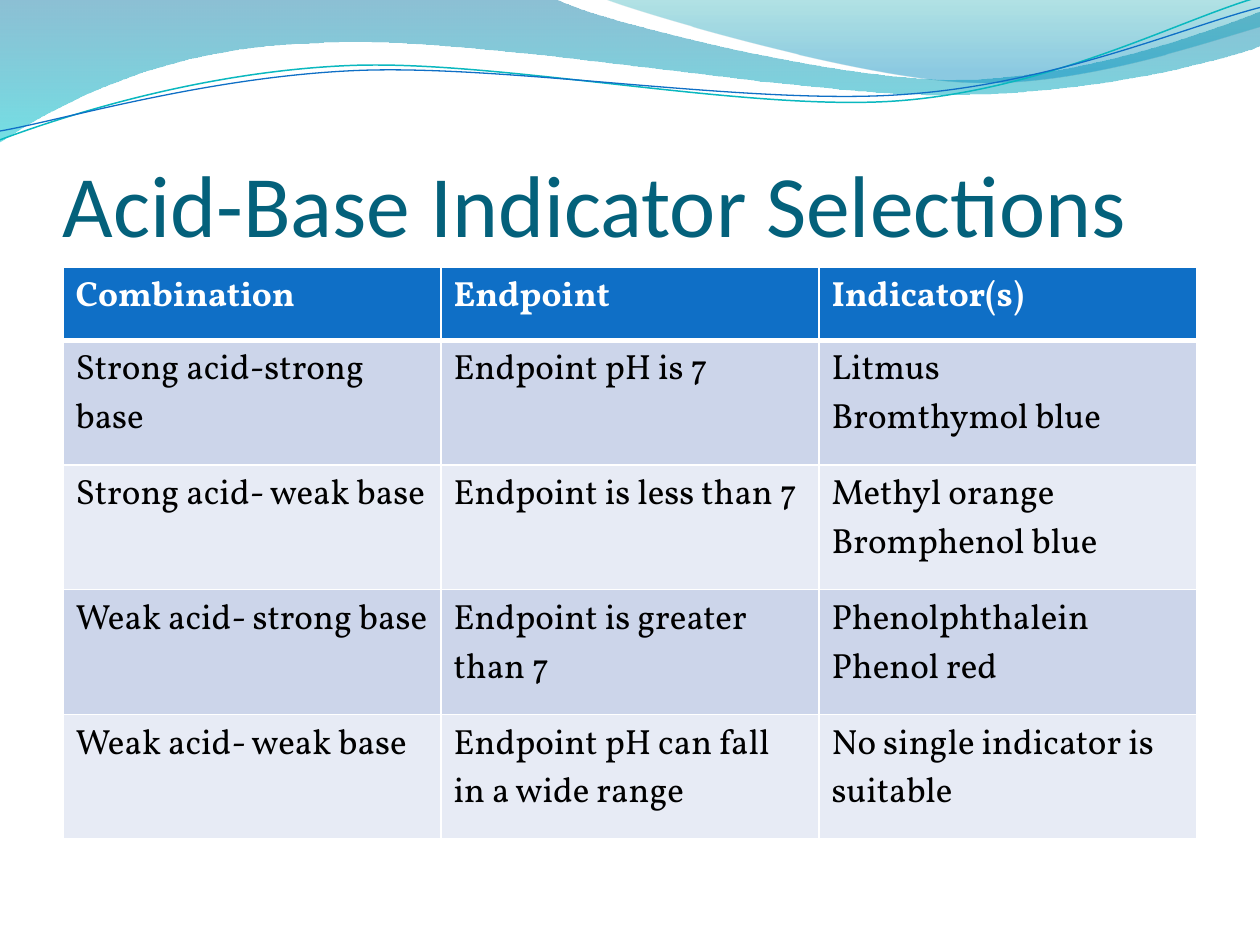
import math
from dataclasses import dataclass

import lxml.etree
import pptx
import pptx.dml.color
import pptx.enum.text
import pptx.oxml.ns
import pptx.util

Inches = pptx.util.Inches
Point = tuple[float, float]
Outline = list[list[Point]]
qn = pptx.oxml.ns.qn
TILT = 2.7


@dataclass
class Stop:
    position: float
    color: str
    opacity: int


@dataclass
class Band:
    outline: Outline
    stops: list[Stop]


@dataclass
class Ripple:
    outline: Outline
    center: Point
    color: str
    width: float


BANDS = [
    Band(
        [[(0, 0)], [(4.4, -0.01)],
         [(4.76, 0.17), (6.64, 0.63), (7.58, 0.63)],
         [(8.53, 0.63), (9.58, 0.26), (10, 0.09)],
         [(10.01, 0.36)],
         [(9.83, 0.44), (8.7, 0.76), (7.46, 0.75)],
         [(6.22, 0.75), (3.82, 0.28), (2.57, 0.34)],
         [(1.29, 0.36), (0.46, 0.83), (-0.01, 1.13)],
         [(0, 0)]],
        [Stop(0, "0074A1", 45), Stop(1, "00C6CF", 55)],
    ),
    Band(
        [[(4.79, -0.01)],
         [(5.09, 0.11), (6.82, 0.62), (7.69, 0.65)],
         [(8.56, 0.69), (9.61, 0.32), (10, 0.21)],
         [(10, 0)], [(4.79, -0.01)]],
        [Stop(0, "00A1A9", 30), Stop(0.8, "008BBF", 45)],
    ),
]
RIPPLES = [
    Ripple(
        [[(0, 1.11)],
         [(0.48, 0.93), (1.58, 0.57), (2.77, 0.52)],
         [(3.95, 0.47), (5.93, 0.89), (7.13, 0.8)],
         [(8.33, 0.71), (9.38, 0.15), (9.98, -0.02)]],
        (4.99, 0.58), "0AB8BF", 0.85,
    ),
    Ripple(
        [[(0, 1.04)],
         [(0.47, 0.96), (1.64, 0.61), (2.83, 0.56)],
         [(4.03, 0.51), (5.97, 0.84), (7.17, 0.75)],
         [(8.36, 0.67), (9.41, 0.21), (10, 0.06)]],
        (5, 0.59), "0F6FC6", 0.75,
    ),
]
ROWS = [
    ("Combination", "Endpoint", "Indicator(s)"),
    ("Strong acid-strong base", "Endpoint pH is 7", "Litmus\nBromthymol blue"),
    ("Strong acid- weak base", "Endpoint is less than 7", "Methyl orange\nBromphenol blue"),
    ("Weak acid- strong base", "Endpoint is greater than 7", "Phenolphthalein\nPhenol red"),
    ("Weak acid- weak base", "Endpoint pH can fall in a wide range",
     "No single indicator is suitable"),
]


def rgb(color: str) -> pptx.dml.color.RGBColor:
    return pptx.dml.color.RGBColor.from_string(color)


def turn(point: Point, center: Point, degrees: float) -> Point:
    angle = math.radians(degrees)
    x, y = point[0] - center[0], point[1] - center[1]
    return (center[0] + x * math.cos(angle) - y * math.sin(angle),
            center[1] + x * math.sin(angle) + y * math.cos(angle))


def draw_outline(page, outline: Outline, close: bool):
    vertices = [(Inches(x), Inches(y)) for segment in outline for x, y in segment]
    builder = page.shapes.build_freeform(*vertices[0])
    builder.add_line_segments(vertices[1:], close=close)
    shape = builder.convert_to_shape()
    shape.shadow.inherit = False
    lines = iter(list(shape.element.iter(qn("a:lnTo"))))
    for segment in outline[1:]:
        parts = [next(lines) for _ in segment]
        if len(parts) == 3:
            curve = lxml.etree.Element(qn("a:cubicBezTo"))
            parts[0].addprevious(curve)
            for part in parts:
                curve.append(part[0])
                part.getparent().remove(part)
    return shape


def draw_band(page, band: Band) -> None:
    shape = draw_outline(page, band.outline, True)
    shape.line.fill.background()
    shape.fill.gradient()
    shape.fill.gradient_angle = 270
    for target, stop in zip(shape.fill.gradient_stops, band.stops):
        target.position = stop.position
        target.color.rgb = rgb(stop.color)
    for node, stop in zip(shape.element.spPr.iter(qn("a:srgbClr")), band.stops):
        lxml.etree.SubElement(node, qn("a:alpha"), val=str(stop.opacity * 1000))


def draw_ripple(page, ripple: Ripple) -> None:
    level = [[turn(point, ripple.center, TILT) for point in segment]
             for segment in ripple.outline]
    shape = draw_outline(page, level, False)
    shape.rotation = -TILT
    shape.fill.background()
    shape.line.color.rgb = rgb(ripple.color)
    shape.line.width = pptx.util.Pt(ripple.width)


def draw_title(page, text: str) -> None:
    box = page.shapes.add_textbox(Inches(0.5), Inches(0.77), Inches(9), Inches(1.25))
    frame = box.text_frame
    frame.word_wrap = True
    frame.vertical_anchor = pptx.enum.text.MSO_ANCHOR.BOTTOM
    frame.margin_left = frame.margin_right = frame.margin_bottom = 0
    frame.text = text
    font = frame.paragraphs[0].font
    font.name, font.size = "Calibri", pptx.util.Pt(50)
    font.color.rgb = rgb("04617B")


def set_border(cell, side: str, width: float) -> None:
    properties = cell._tc.get_or_add_tcPr()
    line = lxml.etree.SubElement(
        properties, qn(f"a:ln{side}"), w=str(pptx.util.Pt(width)))
    fill = lxml.etree.SubElement(line, qn("a:solidFill"))
    lxml.etree.SubElement(fill, qn("a:srgbClr"), val="FFFFFF")


def fill_cell(cell, text: str, row: int) -> None:
    header = row == 0
    for side in "LRTB":
        set_border(cell, side, 3 if header and side == "B" else 1)
    cell.fill.solid()
    shade = "0F6FC6" if header else ("E7EBF5", "CCD5EA")[row % 2]
    cell.fill.fore_color.rgb = rgb(shade)
    cell.text = text
    for para in cell.text_frame.paragraphs:
        para.font.name, para.font.size = "Vollkorn", pptx.util.Pt(20)
        para.font.bold = header
        para.font.color.rgb = rgb("FFFFFF" if header else "000000")


def draw_table(page, rows: list[tuple[str, str, str]]) -> None:
    frame = page.shapes.add_table(
        len(rows), len(rows[0]), Inches(0.5), Inches(2.12), Inches(9), Inches(4.55))
    table = frame.table
    table.horz_banding = False
    for row, texts in enumerate(rows):
        table.rows[row].height = Inches(0.99 if row else 0.58)
        for column, text in enumerate(texts):
            fill_cell(table.cell(row, column), text, row)


def main() -> None:
    deck = pptx.Presentation()
    deck.slide_width, deck.slide_height = Inches(10), Inches(7.5)
    page = deck.slides.add_slide(deck.slide_layouts[6])
    for band in BANDS:
        draw_band(page, band)
    for ripple in RIPPLES:
        draw_ripple(page, ripple)
    draw_title(page, "Acid-Base Indicator Selections")
    draw_table(page, ROWS)
    deck.save("out.pptx")


if __name__ == "__main__":
    main()
